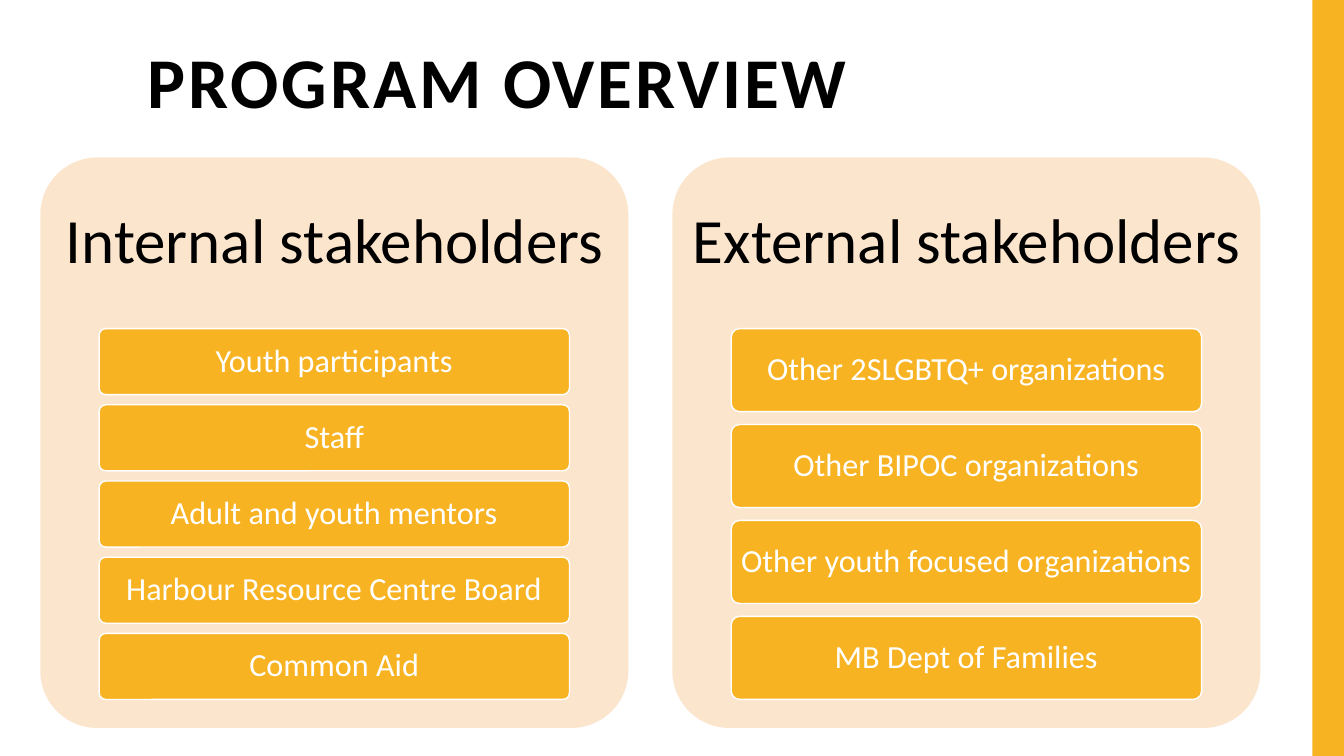
from pptx import Presentation
from pptx.dml.color import RGBColor
from pptx.enum.shapes import MSO_SHAPE as Preset
from pptx.enum.text import MSO_ANCHOR as Anchor, PP_ALIGN as Align
from pptx.util import Pt

COLOURS = {"gold": "F8B323", "peach": "FCE5CD", "white": "FFFFFF", "black": "000000"}

PANEL_LEFT, PANEL_TOP = 28.8, 112.5
PANEL_WIDTH, PANEL_HEIGHT = 420, 407.5
PANEL_PITCH = 451.5
GAP_RATIO = 2 / 13  # gap between items as a share of item height

STAKEHOLDERS = {
    "Internal stakeholders": [
        "Youth participants",
        "Staff",
        "Adult and youth mentors",
        "Harbour Resource Centre Board",
        "Common Aid",
    ],
    "External stakeholders": [
        "Other 2SLGBTQ+ organizations",
        "Other BIPOC organizations",
        "Other youth focused organizations",
        "MB Dept of Families",
    ],
}


class SlideBuilder:
    def __init__(self, page, font="Calibri"):
        self.page = page
        self.font = font

    def colour(self, name):
        return RGBColor.from_string(COLOURS[name])

    def shape(self, preset, left, top, width, height, fill, line=None):
        box = self.page.shapes.add_shape(preset, Pt(left), Pt(top), Pt(width), Pt(height))
        box.shadow.inherit = False
        box.fill.solid()
        box.fill.fore_color.rgb = self.colour(fill)
        if line:
            box.line.color.rgb = self.colour(line)
            box.line.width = Pt(1)
        else:
            box.line.fill.background()
        return box

    def rounded(self, *place, **style):
        box = self.shape(Preset.ROUNDED_RECTANGLE, *place, **style)
        box.adjustments[0] = 0.1
        return box

    def text_box(self, left, top, width, height):
        return self.page.shapes.add_textbox(Pt(left), Pt(top), Pt(width), Pt(height))

    def add_text(self, box, text, size, colour, align=Align.CENTER, anchor=Anchor.MIDDLE,
                 inset=(3.6, 3.6), bold=False, spacing=0):
        """Put one line of text in a box; inset is (horizontal, vertical)."""
        frame = box.text_frame
        frame.word_wrap = True
        frame.vertical_anchor = anchor
        frame.margin_left = frame.margin_right = Pt(inset[0])
        frame.margin_top = frame.margin_bottom = Pt(inset[1])
        para = frame.paragraphs[0]
        para.alignment = align
        para.line_spacing = 0.9
        span = para.add_run()
        span.text = text
        span.font.name = self.font
        span.font.size = Pt(size)
        span.font.bold = bold
        span.font.color.rgb = self.colour(colour)
        if spacing:
            span._r.get_or_add_rPr().set("spc", str(spacing * 100))

    def panel(self, left, heading, items):
        """Draw a rounded panel with a heading and equal items below it."""
        self.rounded(left, PANEL_TOP, PANEL_WIDTH, PANEL_HEIGHT, fill="peach")
        heading_height = PANEL_HEIGHT * 0.3
        heading_box = self.text_box(left, PANEL_TOP, PANEL_WIDTH, heading_height)
        self.add_text(heading_box, heading, 45, "black", inset=(12, 13.5))

        count = len(items)
        item_height = PANEL_HEIGHT * 0.65 / (count + (count - 1) * GAP_RATIO)
        for index, item in enumerate(items):
            top = PANEL_TOP + heading_height + index * item_height * (1 + GAP_RATIO)
            box = self.rounded(left + PANEL_WIDTH * 0.1, top, PANEL_WIDTH * 0.8, item_height,
                               fill="gold", line="white")
            self.add_text(box, item, 23, "white", inset=(2, 3.6))


def main():
    deck = Presentation()
    deck.slide_width, deck.slide_height = Pt(960), Pt(540)
    builder = SlideBuilder(deck.slides.add_slide(deck.slide_layouts[6]))

    builder.shape(Preset.RECTANGLE, 937.5, 0, 22.5, 540, fill="gold")
    title = builder.text_box(98.6, 30.2, 801.4, 70)
    builder.add_text(title, "PROGRAM OVERVIEW", 51, "black", align=Align.LEFT,
                     anchor=Anchor.TOP, inset=(7.2, 3.6), bold=True, spacing=2)
    for column, (heading, items) in enumerate(STAKEHOLDERS.items()):
        builder.panel(PANEL_LEFT + column * PANEL_PITCH, heading, items)

    deck.save("out.pptx")


if __name__ == "__main__":
    main()
